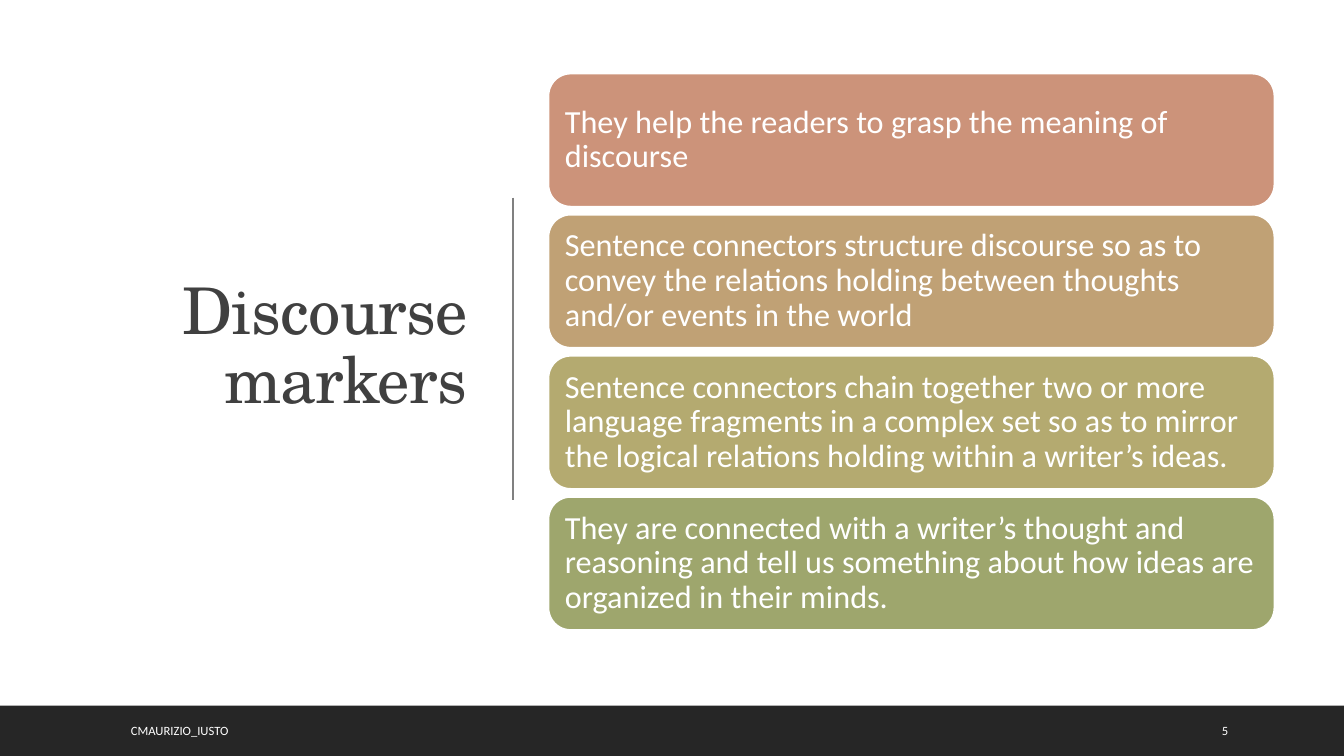
from pptx import Presentation
from pptx.dml.color import RGBColor
from pptx.enum.shapes import MSO_CONNECTOR as CONNECTOR, MSO_SHAPE as SHAPE
from pptx.enum.text import MSO_ANCHOR as ANCHOR, PP_ALIGN as ALIGN
from pptx.oxml.ns import qn
from pptx.util import Inches, Pt
from lxml import etree

CARDS = [
    ("CC937A", "They help the readers to grasp the meaning of discourse"),
    ("C0A175", "Sentence connectors structure discourse so as to convey the "
               "relations holding between thoughts and/or events in the world"),
    ("B4AA70", "Sentence connectors chain together two or more language "
               "fragments in a complex set so as to mirror the logical "
               "relations holding within a writer’s ideas."),
    ("9EA66D", "They are connected with a writer’s thought and reasoning and "
               "tell us something about how ideas are organized in their minds."),
]
CARD_TOP, CARD_PITCH = 0.73, 1.4


def rgb(value):
    return RGBColor.from_string(value)


def write(tf, text, size=9, font="Calibri", color="FFFFFF", align=ALIGN.LEFT,
          line_spacing=1.0, tracking=None, inset_y=0.05):
    """Fill a text frame with one paragraph; tracking is in points."""
    tf.word_wrap = True
    tf.vertical_anchor = ANCHOR.MIDDLE
    tf.margin_left = tf.margin_right = Inches(0.1)
    tf.margin_top = tf.margin_bottom = Inches(inset_y)
    p = tf.paragraphs[0]
    p.alignment = align
    p.line_spacing = line_spacing
    r = p.add_run()
    r.text = text
    r.font.size = Pt(size)
    r.font.name = font
    r.font.color.rgb = rgb(color)
    if tracking is not None:
        r.font._element.set("spc", str(int(tracking * 100)))


class SlideBuilder:
    def __init__(self, slide):
        self.slide = slide
        fill = slide.background.fill
        fill.solid()
        fill.fore_color.rgb = rgb("FFFFFF")

    def text(self, box, text, **style):
        sp = self.slide.shapes.add_textbox(*map(Inches, box))
        write(sp.text_frame, text, **style)

    def shape(self, kind, box, fill, outline=None):
        sp = self.slide.shapes.add_shape(kind, *map(Inches, box))
        sp.shadow.inherit = False
        sp.fill.solid()
        sp.fill.fore_color.rgb = rgb(fill)
        if outline:
            sp.line.color.rgb = rgb(outline)
            sp.line.width = Pt(1.25)
        else:
            sp.line.fill.background()
        return sp

    def card(self, box, fill, text):
        sp = self.shape(SHAPE.ROUNDED_RECTANGLE, box, fill, outline="FFFFFF")
        write(sp.text_frame, text, size=23, line_spacing=0.9, inset_y=0.1)

    def line(self, start, end, color, width):
        ends = map(Inches, (*start, *end))
        cxn = self.slide.shapes.add_connector(CONNECTOR.STRAIGHT, *ends)
        cxn.line.color.rgb = rgb(color)
        cxn.line.width = Pt(width)
        etree.SubElement(cxn._element.spPr, qn("a:effectLst"))


def main():
    prs = Presentation()
    prs.slide_width, prs.slide_height = Inches(13.33), Inches(7.5)
    s = SlideBuilder(prs.slides.add_slide(prs.slide_layouts[6]))

    s.text((0.7, 0.69, 4.03, 5.53), "Discourse markers", size=46,
           font="TeX Gyre Schola", color="404040", align=ALIGN.RIGHT,
           line_spacing=0.9, tracking=-0.5)
    s.line((5.09, 1.96), (5.09, 4.96), "808080", 1)
    s.shape(SHAPE.RECTANGLE, (0, 7, 13.33, 0.5), "262626")

    for i, (fill, text) in enumerate(CARDS):
        s.card((5.44, CARD_TOP + i * CARD_PITCH, 7.2, 1.32), fill, text)

    s.text((1.2, 7.05, 7.46, 0.4), "CMAURIZIO_IUSTO")
    s.text((12.02, 7.05, 0.85, 0.4), "5")
    prs.save("out.pptx")


if __name__ == "__main__":
    main()
